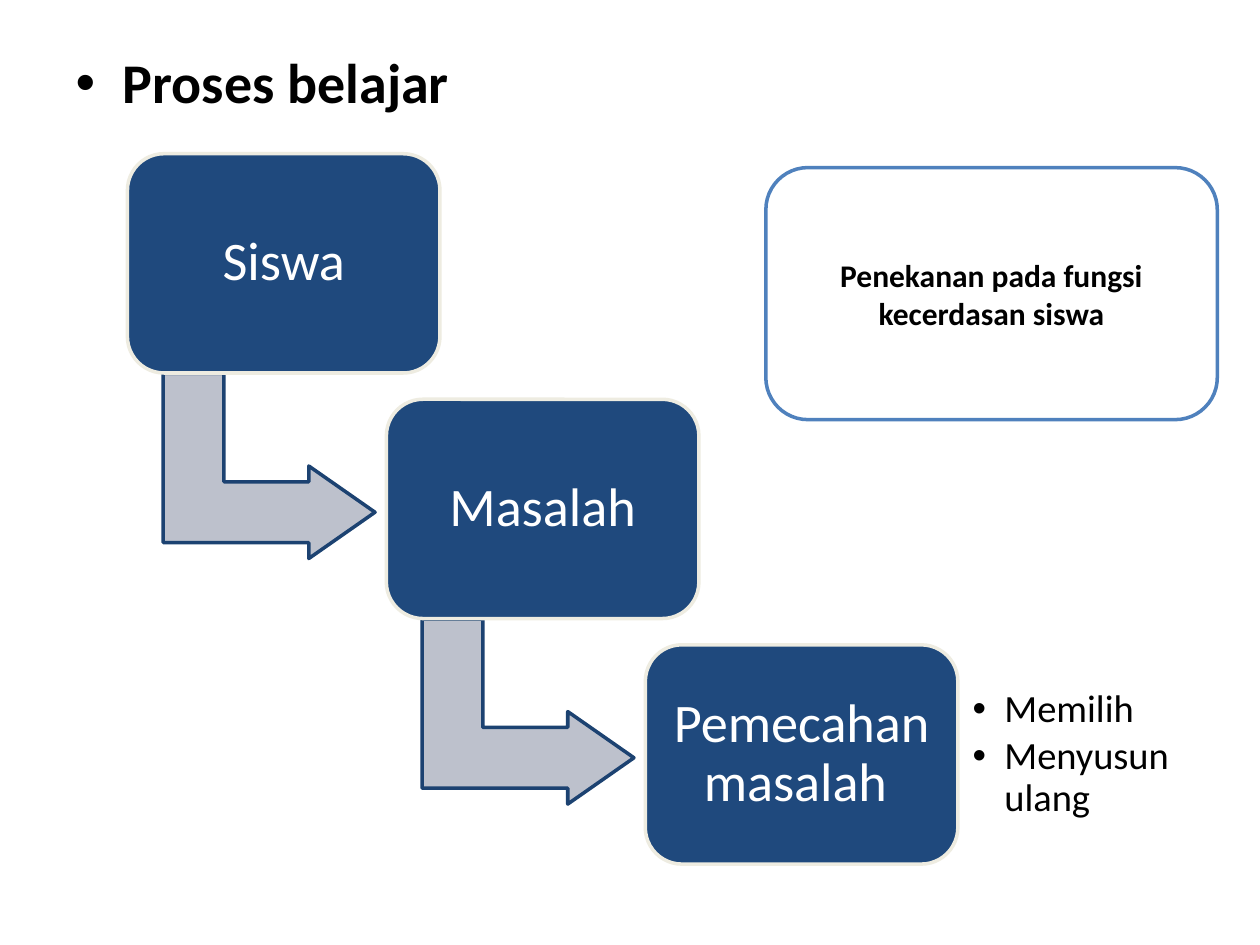
from pptx import Presentation
from pptx.dml.color import RGBColor as RGB
from pptx.enum.shapes import MSO_SHAPE as SHAPE
from pptx.enum.text import MSO_ANCHOR as ANCHOR, PP_ALIGN as ALIGN
from pptx.oxml import parse_xml
from pptx.oxml.ns import nsdecls
from pptx.util import Cm, Pt

HEADING = "Proses belajar"
STEPS = ["Siswa", "Masalah", "Pemecahan masalah "]
ACTIONS = ["Memilih", "Menyusun ulang"]
NOTE = "Penekanan pada fungsi kecerdasan siswa"

THEME = {
    "font": "Calibri",
    "text": "000000", "light": "FFFFFF",
    "box": "1F497D", "box_line": "EEECE1",
    "arrow": "BDC1CC", "arrow_line": "1C4271",
    "note_line": "4F81BD",
    "heading_size": 32, "step_size": 31, "action_size": 22, "note_size": 18,
    "line_width": 2,
}

BOX_W, BOX_H = 6.3, 4.42
START_X, START_Y = 2.57, 3.1
STEP_X, STEP_Y = 5.22, 4.95
ARROW_W, ARROW_H = 3.73, 4.27
ARROW_DX, ARROW_DY = 0.99, 4.16
ARROW_ADJ = (0.328, 0.25, 0.358)
PAD = 0.33


def color(name):
    return RGB.from_string(THEME[name])


def apply(obj, **values):
    for name, value in values.items():
        setattr(obj, name, value)


def add_shape(kind, x, y, w, h, fill, line):
    sp = slide.shapes.add_shape(kind, Cm(x), Cm(y), Cm(w), Cm(h))
    sp.shadow.inherit = False
    sp.fill.solid()
    sp.fill.fore_color.rgb = color(fill)
    sp.line.color.rgb = color(line)
    sp.line.width = Pt(THEME["line_width"])
    return sp


def write(sp, lines, size, ink, bold=False, pad=None, anchor=ANCHOR.MIDDLE, **para):
    tf = sp.text_frame
    apply(tf, word_wrap=True, vertical_anchor=anchor)
    if pad is not None:
        apply(tf, **{f"margin_{side}": Cm(pad) for side in ("left", "right", "top", "bottom")})
    for i, line in enumerate(lines):
        p = tf.paragraphs[0] if i == 0 else tf.add_paragraph()
        apply(p, **para)
        r = p.add_run()
        r.text = line
        apply(r.font, name=THEME["font"], size=Pt(THEME[size]), bold=bold)
        r.font.color.rgb = color(ink)


def add_bullets(sp, indent):
    for p in sp.text_frame.paragraphs:
        pPr = p._p.get_or_add_pPr()
        pPr.set("marL", str(Cm(indent)))
        pPr.set("indent", str(-Cm(indent)))
        pPr.append(parse_xml(f'<a:buFont {nsdecls("a")} typeface="Arial"/>'))
        pPr.append(parse_xml(f'<a:buChar {nsdecls("a")} char="•"/>'))


prs = Presentation()
apply(prs, slide_width=Cm(25.4), slide_height=Cm(19.05))
slide = prs.slides.add_slide(prs.slide_layouts[1])
title, body = slide.placeholders
title._element.getparent().remove(title._element)

apply(body, left=Cm(1.27), top=Cm(0.84), width=Cm(22.86), height=Cm(16.18))
write(body, [HEADING], "heading_size", "text", bold=True, anchor=ANCHOR.TOP)
add_bullets(body, 0.95)

for i, step in enumerate(STEPS):
    x, y = START_X + i * STEP_X, START_Y + i * STEP_Y
    if i < len(STEPS) - 1:
        arrow = add_shape(SHAPE.BENT_UP_ARROW, x + ARROW_DX, y + ARROW_DY,
                          ARROW_W, ARROW_H, "arrow", "arrow_line")
        arrow.rotation = 90
        for k, value in enumerate(ARROW_ADJ):
            arrow.adjustments[k] = value
    box = add_shape(SHAPE.ROUNDED_RECTANGLE, x, y, BOX_W, BOX_H, "box", "box_line")
    write(box, [step], "step_size", "light", pad=PAD,
          alignment=ALIGN.CENTER, line_spacing=0.9)

actions = slide.shapes.add_textbox(Cm(x + BOX_W), Cm(y + 0.43), Cm(4.6), Cm(3.56))
write(actions, ACTIONS, "action_size", "text", pad=0.3,
      line_spacing=0.9, space_after=Pt(3.3))
add_bullets(actions, 0.64)

note = add_shape(SHAPE.ROUNDED_RECTANGLE, 15.44, 3.38, 9.1, 5.08, "light", "note_line")
write(note, [NOTE], "note_size", "text", bold=True, alignment=ALIGN.CENTER)

prs.save("out.pptx")
